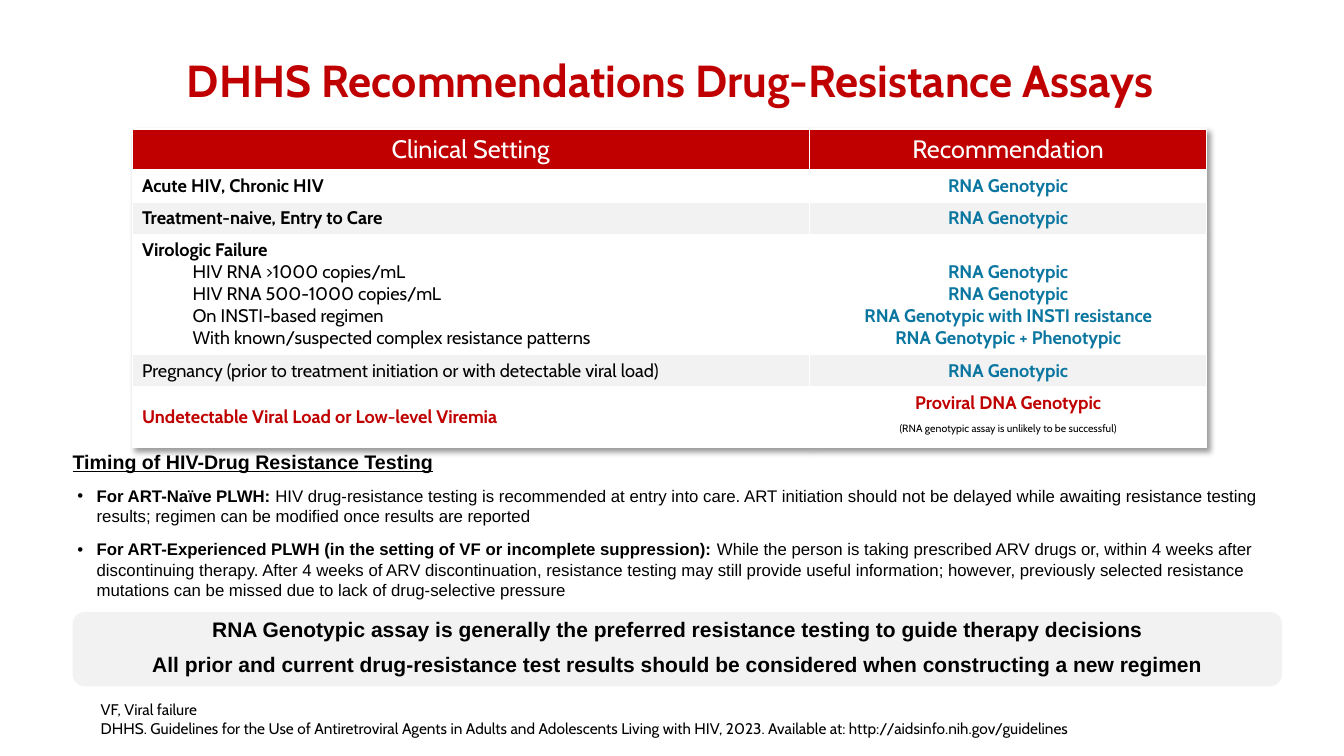
from lxml import etree
from pptx import Presentation
from pptx import util as u
from pptx.dml.color import RGBColor
from pptx.enum import shapes, text
from pptx.oxml.ns import qn

RED = RGBColor(0xC0, 0x00, 0x00)
BLUE = RGBColor(0x0B, 0x76, 0xA0)
BLACK = RGBColor(0x00, 0x00, 0x00)
WHITE = RGBColor(0xFF, 0xFF, 0xFF)
GREY = RGBColor(0xF2, 0xF2, 0xF2)
SLIDE_W, SLIDE_H = u.Inches(13.33), u.Inches(7.5)

STYLES = {
    "title": ("Cabin", 32, RED, True),
    "header": ("Cabin", 18, WHITE, False),
    "setting": ("Cabin", 13, BLACK, True),
    "detail": ("Cabin", 13, BLACK, False),
    "assay": ("Cabin", 13, BLUE, True),
    "alert": ("Cabin", 13, RED, True),
    "source": ("Cabin", 11, BLACK, False),
    "heading": ("Arial", 14, BLACK, True),
    "lead": ("Arial", 12, BLACK, True),
    "body": ("Arial", 12, BLACK, False),
    "banner": ("Arial", 15, BLACK, True),
}

AREAS = {
    "title": (6.75, 6.27, 86.27, 10.93),
    "table": (9.83, 17.07, 79.97, 40.8),
    "heading": (5.4, 59.87, 33.98, 2.8),
    "naive": (5.03, 63.6, 90, 6.67),
    "experienced": (5.03, 70.67, 89.87, 9.47),
    "panel": (5.4, 80.93, 90, 9.87),
    "banner": (2.85, 80.93, 95.12, 9.2),
    "sources": (6.75, 92, 75.84, 6.27),
}

TITLE = "DHHS Recommendations Drug-Resistance Assays"
COLUMN_SHARES = (0.63, 0.37)
ROW_HEIGHTS = (0.38, 0.3, 0.3, 1.14, 0.3, 0.51)
RNA = ("RNA Genotypic", "assay")
NOTE = "(RNA genotypic assay is unlikely to be successful)"
ROWS = [
    ([("Clinical Setting", "header")], [("Recommendation", "header")]),
    ([("Acute HIV, Chronic HIV", "setting")], [RNA]),
    ([("Treatment-naive, Entry to Care", "setting")], [RNA]),
    ([("Virologic Failure", "setting"),
      ("HIV RNA >1000 copies/mL", "detail"),
      ("HIV RNA 500-1000 copies/mL", "detail"),
      ("On INSTI-based regimen", "detail"),
      ("With known/suspected complex resistance patterns", "detail")],
     [RNA, RNA,
      ("RNA Genotypic with INSTI resistance", "assay"),
      ("RNA Genotypic + Phenotypic", "assay")]),
    ([("Pregnancy (prior to treatment initiation or with detectable viral load)", "detail")], [RNA]),
    ([("Undetectable Viral Load or Low-level Viremia", "alert")],
     [("Proviral DNA Genotypic", "alert"), (NOTE, "detail")]),
]

HEADING = "Timing of HIV-Drug Resistance Testing"
TIMING = {
    "naive": (
        "For ART-Naïve PLWH: ",
        "HIV drug-resistance testing is recommended at entry into care. ART initiation should not be "
        "delayed while awaiting resistance testing results; regimen can be modified once results are reported"),
    "experienced": (
        "For ART-Experienced PLWH (in the setting of VF or incomplete suppression): ",
        "While the person is taking prescribed ARV drugs or, within 4 weeks after discontinuing therapy. "
        "After 4 weeks of ARV discontinuation, resistance testing may still provide useful information; "
        "however, previously selected resistance mutations can be missed due to lack of drug-selective pressure"),
}
BANNER = [
    "RNA Genotypic assay is generally the preferred resistance testing to guide therapy decisions",
    "All prior and current drug-resistance test results should be considered when constructing a new regimen",
]
SOURCES = [
    "VF, Viral failure",
    "DHHS. Guidelines for the Use of Antiretroviral Agents in Adults and Adolescents Living with HIV, 2023. "
    "Available at: http://aidsinfo.nih.gov/guidelines",
]


def area(name):
    left, top, width, height = AREAS[name]
    return (int(SLIDE_W * left / 100), int(SLIDE_H * top / 100),
            int(SLIDE_W * width / 100), int(SLIDE_H * height / 100))


def add_run(paragraph, words, style):
    run = paragraph.add_run()
    run.text = words
    run.font.name, size, run.font.color.rgb, run.font.bold = STYLES[style]
    run.font.size = u.Pt(size)
    return run


def add_paragraphs(frame, lines, align=text.PP_ALIGN.LEFT):
    for number, (words, style) in enumerate(lines):
        paragraph = frame.add_paragraph() if number else frame.paragraphs[0]
        paragraph.alignment = align
        add_run(paragraph, words, style)
    return frame.paragraphs


def add_box(slide, name):
    frame = slide.shapes.add_textbox(*area(name)).text_frame
    frame.word_wrap = True
    return frame


def add_title(slide):
    title = slide.shapes.title
    title.left, title.top, title.width, title.height = area("title")
    title.text_frame.vertical_anchor = text.MSO_ANCHOR.TOP
    title.text_frame.auto_size = text.MSO_AUTO_SIZE.NONE
    add_paragraphs(title.text_frame, [(TITLE, "title")], text.PP_ALIGN.CENTER)


def add_recommendations(slide):
    left, top, width, height = area("table")
    table = slide.shapes.add_table(len(ROWS), 2, left, top, width, height).table
    for column, share in zip(table.columns, COLUMN_SHARES):
        column.width = int(width * share)
    for r, row in enumerate(ROWS):
        table.rows[r].height = u.Inches(ROW_HEIGHTS[r])
        for c, lines in enumerate(row):
            cell = table.cell(r, c)
            cell.fill.solid()
            cell.fill.fore_color.rgb = RED if r == 0 else WHITE if r % 2 else GREY
            aligned_to_list = c == 1 and len(lines) < len(row[0])
            cell.vertical_anchor = text.MSO_ANCHOR.BOTTOM if aligned_to_list else text.MSO_ANCHOR.MIDDLE
            centred = c == 1 or r == 0
            paragraphs = add_paragraphs(
                cell.text_frame, lines, text.PP_ALIGN.CENTER if centred else text.PP_ALIGN.LEFT)
            if c == 0:
                for detail in paragraphs[1:]:
                    detail.level = 1
                    detail._p.get_or_add_pPr().set("marL", str(u.Inches(0.5)))
            if lines[-1][0] == NOTE:
                paragraphs[-1].space_before = u.Pt(5)
                paragraphs[-1].runs[0].font._element.set("baseline", "30000")
    add_shadow(table)


def add_shadow(table):
    effects = etree.Element(qn("a:effectLst"))
    shadow = etree.SubElement(effects, qn("a:outerShdw"), blurRad="50800", dist="38100", dir="2700000")
    colour = etree.SubElement(shadow, qn("a:srgbClr"), val="000000")
    etree.SubElement(colour, qn("a:alpha"), val="40000")
    table._tbl.tblPr.insert(0, effects)


def add_timing(slide):
    frame = add_box(slide, "heading")
    frame.margin_left = frame.margin_right = frame.margin_top = frame.margin_bottom = 0
    heading = add_paragraphs(frame, [(HEADING, "heading")])[0]
    heading.line_spacing = 0.9
    heading.runs[0].font.underline = True
    for name, (lead, body) in TIMING.items():
        paragraph = add_box(slide, name).paragraphs[0]
        add_run(paragraph, lead, "lead")
        add_run(paragraph, body, "body")
        properties = paragraph._p.get_or_add_pPr()
        properties.set("marL", str(u.Inches(0.19)))
        properties.set("indent", str(-u.Inches(0.19)))
        etree.SubElement(properties, qn("a:buFont"), typeface="Arial")
        etree.SubElement(properties, qn("a:buChar"), char="•")


def add_banner(slide):
    panel = slide.shapes.add_shape(shapes.MSO_SHAPE.ROUNDED_RECTANGLE, *area("panel"))
    panel.shadow.inherit = False
    panel.fill.solid()
    panel.fill.fore_color.rgb = GREY
    panel.line.fill.background()
    lines = add_paragraphs(
        add_box(slide, "banner"), [(line, "banner") for line in BANNER], text.PP_ALIGN.CENTER)
    lines[1].space_before = u.Pt(7)


def main():
    deck = Presentation()
    deck.slide_width, deck.slide_height = SLIDE_W, SLIDE_H
    slide = deck.slides.add_slide(deck.slide_layouts[5])
    add_title(slide)
    add_recommendations(slide)
    add_timing(slide)
    add_banner(slide)
    add_paragraphs(add_box(slide, "sources"), [(line, "source") for line in SOURCES])
    deck.save("out.pptx")


if __name__ == "__main__":
    main()
